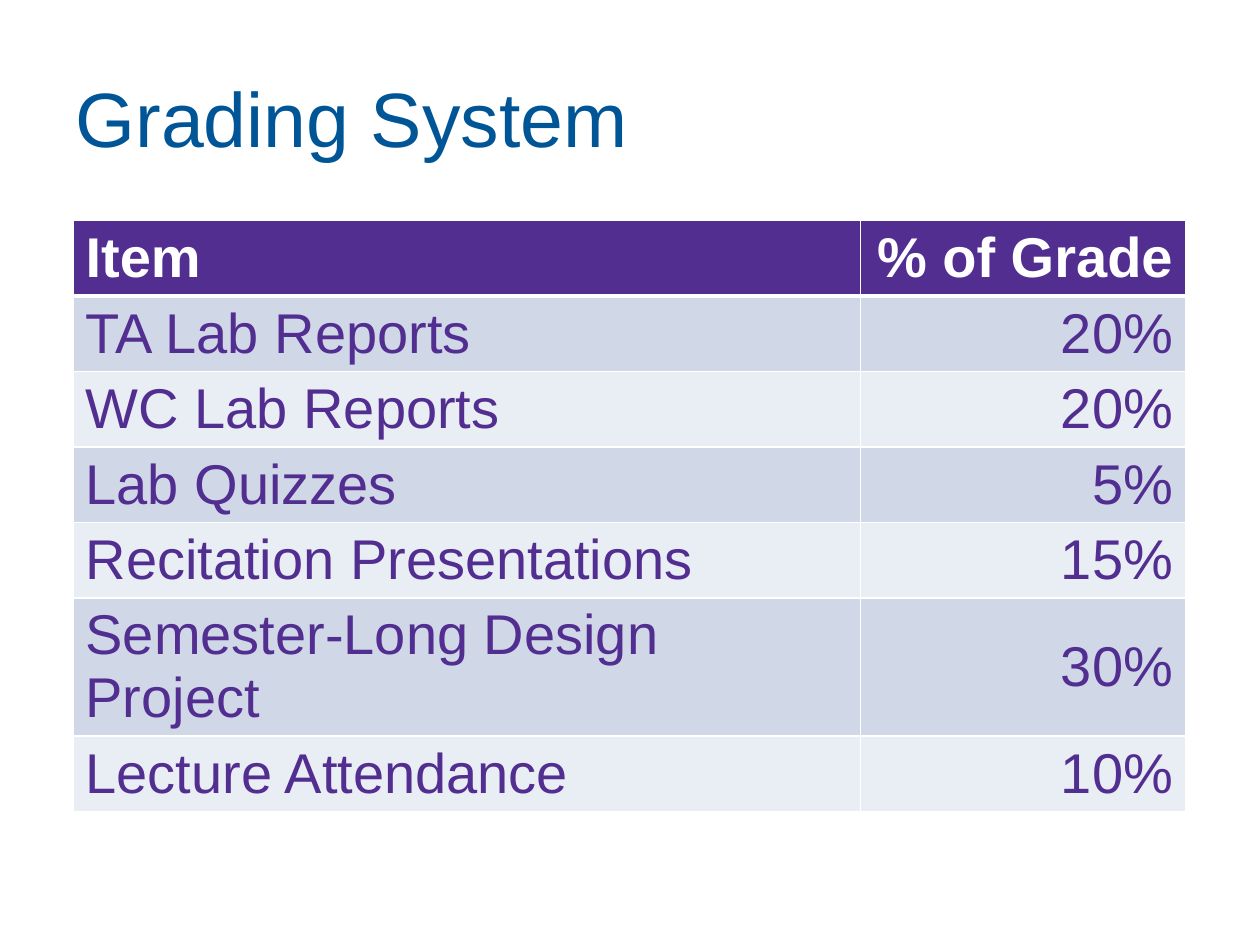
from pptx import Presentation
from pptx.dml.color import RGBColor
from pptx.enum.text import MSO_ANCHOR, PP_ALIGN
from pptx.oxml.ns import qn
from pptx.util import Inches, Pt
from lxml import etree

LEFT, RIGHT = PP_ALIGN.LEFT, PP_ALIGN.RIGHT
MIDDLE = MSO_ANCHOR.MIDDLE
TITLE_ONLY = 5

COLORS = {
    "title": "005596",
    "purple": "522E91",
    "white": "FFFFFF",
    "odd_row": "D0D8E8",
    "even_row": "E9EDF4",
}
TITLE_FORMAT = {"name": "Arial", "size": Pt(44), "bold": False}
HEADER_FORMAT = {"name": "Arial", "size": Pt(32), "bold": True}
ITEM_FORMAT = {**HEADER_FORMAT, "bold": False}

GRADING = [
    ("Item", "% of Grade"),
    ("TA Lab Reports", "20%"),
    ("WC Lab Reports", "20%"),
    ("Lab Quizzes", "5%"),
    ("Recitation Presentations", "15%"),
    ("Semester-Long Design Project", "30%"),
    ("Lecture Attendance", "10%"),
]
COLUMN_WIDTHS = (6.25, 2.58)
COLUMN_ALIGNS = (LEFT, RIGHT)
ROW_HEIGHT = 0.41  # minimum; rows grow to fit their text


def rgb(color):
    return RGBColor.from_string(COLORS[color])


def write(frame, text, font_format, color, align):
    frame.vertical_anchor = MIDDLE
    paragraph = frame.paragraphs[0]
    paragraph.alignment = align
    run = paragraph.add_run()
    run.text = text
    for attribute, value in font_format.items():
        setattr(run.font, attribute, value)
    run.font.color.rgb = rgb(color)


def set_borders(cell, widths):
    """Draw white borders; they must come before the fill in the cell."""
    properties = cell._tc.get_or_add_tcPr()
    for index, (side, width) in enumerate(widths.items()):
        line = etree.Element(qn(f"a:ln{side}"), w=str(Pt(width)))
        fill = etree.SubElement(line, qn("a:solidFill"))
        etree.SubElement(fill, qn("a:srgbClr"), val=COLORS["white"])
        properties.insert(index, line)


def add_title(slide, text):
    title = slide.shapes.title
    title.left, title.top = Inches(0.5), Inches(0.3)
    title.width, title.height = Inches(9), Inches(1.25)
    write(title.text_frame, text, TITLE_FORMAT, "title", LEFT)


def add_grading_table(slide):
    frame = slide.shapes.add_table(
        len(GRADING), len(COLUMN_WIDTHS), Inches(0.58), Inches(1.75),
        Inches(sum(COLUMN_WIDTHS)), Inches(ROW_HEIGHT * len(GRADING)))
    table = frame.table
    for column, width in zip(table.columns, COLUMN_WIDTHS):
        column.width = Inches(width)

    for r, row in enumerate(GRADING):
        # Header row, then alternating bands
        if r == 0:
            font_format, color, fill = HEADER_FORMAT, "white", "purple"
        else:
            font_format, color = ITEM_FORMAT, "purple"
            fill = "odd_row" if r % 2 else "even_row"
        borders = {"L": 1, "R": 1, "T": 3 if r == 1 else 1, "B": 3 if r == 0 else 1}
        for c, text in enumerate(row):
            cell = table.cell(r, c)
            cell.fill.solid()
            cell.fill.fore_color.rgb = rgb(fill)
            set_borders(cell, borders)
            cell.vertical_anchor = MIDDLE
            write(cell.text_frame, text, font_format, color, COLUMN_ALIGNS[c])


def main():
    deck = Presentation()
    deck.slide_width, deck.slide_height = Inches(10), Inches(7.5)
    slide = deck.slides.add_slide(deck.slide_layouts[TITLE_ONLY])
    add_title(slide, "Grading System")
    add_grading_table(slide)
    deck.save("out.pptx")


if __name__ == "__main__":
    main()
